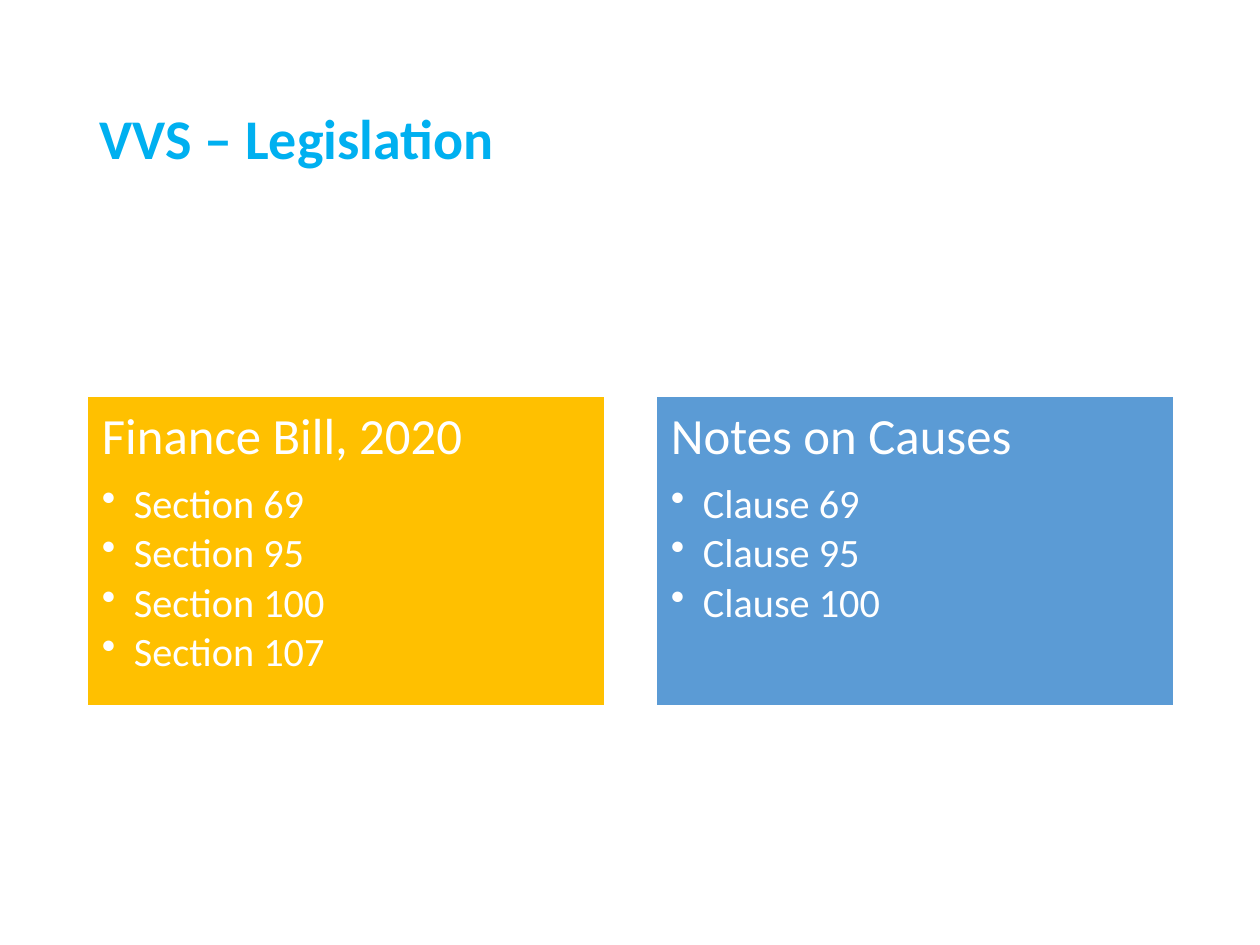
"""Build the VVS legislation slide with two bulleted panels."""
from lxml.etree import SubElement
from pptx import Presentation
from pptx.dml.color import RGBColor
from pptx.enum.shapes import MSO_SHAPE as Shape
from pptx.enum.text import MSO_ANCHOR as Anchor, PP_ALIGN as Align
from pptx.oxml.ns import qn
from pptx.util import Emu, Pt

FONT = "Calibri"
CYAN = RGBColor(0x00, 0xB0, 0xF0)
AMBER = RGBColor(0xFF, 0xC0, 0x00)
BLUE = RGBColor(0x5B, 0x9B, 0xD5)
WHITE = RGBColor(0xFF, 0xFF, 0xFF)

LEFT, PANEL_TOP, PANEL_WIDTH, PANEL_HEIGHT, GAP = 87, 396, 518, 310, 51
PANELS = [
    (AMBER, "Finance Bill, 2020",
     ["Section 69", "Section 95", "Section 100", "Section 107"]),
    (BLUE, "Notes on Causes", ["Clause 69", "Clause 95", "Clause 100"]),
]


def px(pixels):
    return Emu(round(pixels * 914400 / 126))


def format_paragraph(paragraph, size, color, space_after=0, bold=False):
    paragraph.alignment = Align.LEFT
    paragraph.line_spacing = 0.9
    paragraph.space_after = Pt(space_after)
    font = paragraph.runs[0].font
    font.name = FONT
    font.size = Pt(size)
    font.bold = bold
    font.color.rgb = color


presentation = Presentation()
presentation.slide_width, presentation.slide_height = px(1260), px(945)
slide = presentation.slides.add_slide(presentation.slide_layouts[5])

title = slide.shapes.title
title.left, title.top, title.width, title.height = px(LEFT), px(50), px(1086), px(183)
title.text_frame.text = "VVS – Legislation"
title.text_frame.vertical_anchor = Anchor.MIDDLE
format_paragraph(title.text_frame.paragraphs[0], 32, CYAN, bold=True)

for column, (color, heading, items) in enumerate(PANELS):
    left = LEFT + column * (PANEL_WIDTH + GAP)
    panel = slide.shapes.add_shape(
        Shape.RECTANGLE, px(left), px(PANEL_TOP), px(PANEL_WIDTH), px(PANEL_HEIGHT))
    panel.shadow.inherit = False
    panel.fill.solid()
    panel.fill.fore_color.rgb = color
    panel.line.color.rgb = WHITE
    panel.line.width = Pt(1)

    frame = panel.text_frame
    frame.word_wrap = True
    frame.vertical_anchor = Anchor.TOP
    frame.margin_left = frame.margin_right = px(15)
    frame.margin_top = frame.margin_bottom = px(15)
    frame.text = heading
    format_paragraph(frame.paragraphs[0], 29, WHITE, space_after=10)

    for item in items:
        paragraph = frame.add_paragraph()
        paragraph.text = item
        paragraph.level = 1
        format_paragraph(paragraph, 23, WHITE, space_after=3.5)
        properties = paragraph._p.get_or_add_pPr()
        properties.set("marL", str(px(32)))
        properties.set("indent", str(-px(32)))
        SubElement(properties, qn("a:buChar"), char="•")

presentation.save("out.pptx")
